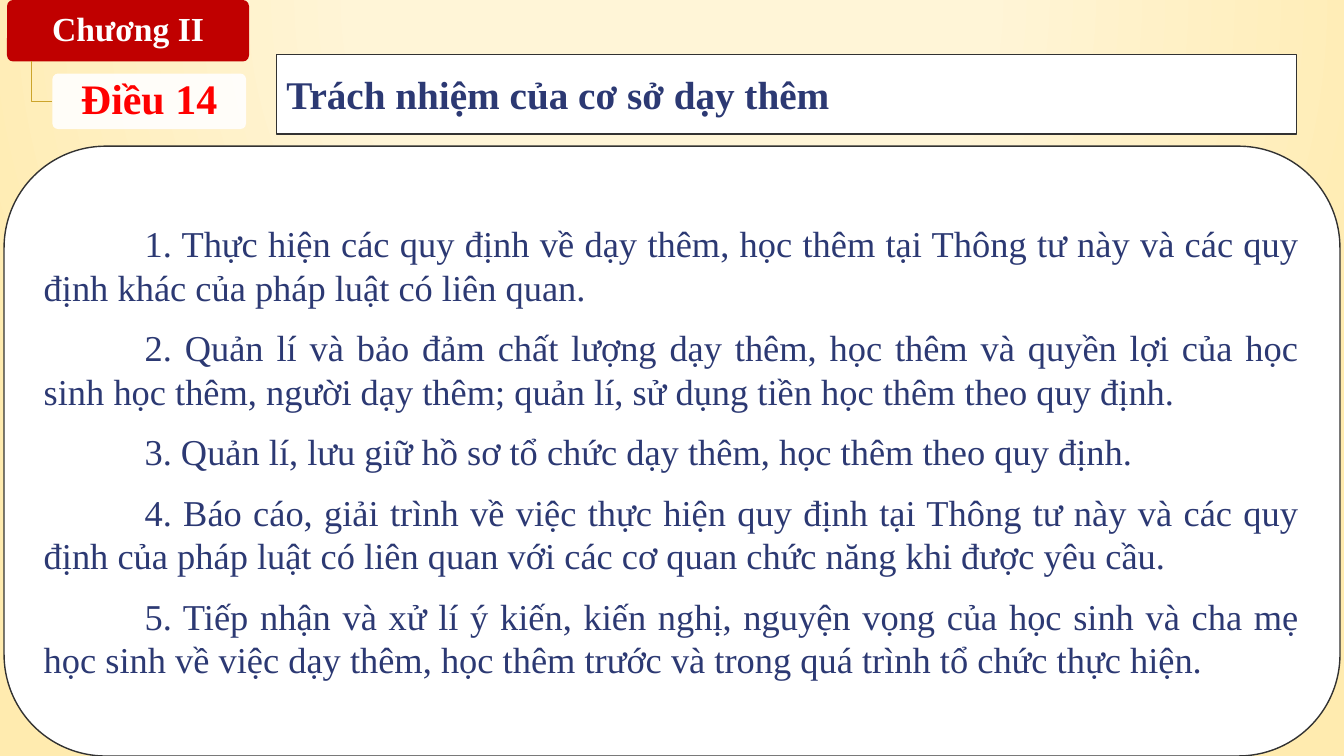
"""Builds the slide on Article 14: duties of tutoring centres."""
from lxml import etree
from pptx import Presentation
from pptx.dml.color import RGBColor
from pptx.enum.shapes import MSO_SHAPE as SHAPE
from pptx.enum.text import MSO_ANCHOR as ANCHOR, PP_ALIGN as ALIGN
from pptx.oxml import parse_xml
from pptx.oxml.ns import nsdecls, qn
from pptx.util import Inches, Pt

RED = RGBColor(0xC0, 0x00, 0x00)
BRIGHT_RED = RGBColor(0xFF, 0x00, 0x00)
WHITE = RGBColor(0xFF, 0xFF, 0xFF)
GOLD = RGBColor(0xCC, 0xA4, 0x2B)
DARK = RGBColor(0x32, 0x32, 0x32)
NAVY = RGBColor(0x2C, 0x39, 0x73)

DUTIES = [
    "1. Thực hiện các quy định về dạy thêm, học thêm tại Thông tư này và các quy định khác "
    "của pháp luật có liên quan.",
    "2. Quản lí và bảo đảm chất lượng dạy thêm, học thêm và quyền lợi của học sinh học thêm, "
    "người dạy thêm; quản lí, sử dụng tiền học thêm theo quy định.",
    "3. Quản lí, lưu giữ hồ sơ tổ chức dạy thêm, học thêm theo quy định.",
    "4. Báo cáo, giải trình về việc thực hiện quy định tại Thông tư này và các quy định của "
    "pháp luật có liên quan với các cơ quan chức năng khi được yêu cầu.",
    "5. Tiếp nhận và xử lí ý kiến, kiến nghị, nguyện vọng của học sinh và cha mẹ học sinh về "
    "việc dạy thêm, học thêm trước và trong quá trình tổ chức thực hiện.",
]


def add_rounded(left, top, width, height, fill):
    box = page.shapes.add_shape(
        SHAPE.ROUNDED_RECTANGLE, Inches(left), Inches(top), Inches(width), Inches(height))
    box.shadow.inherit = False
    box.fill.solid()
    box.fill.fore_color.rgb = fill
    box.line.fill.background()
    return box


def write(box, lines, size, color, bold, align):
    frame = box.text_frame
    frame.text = "\n".join(lines)
    frame.word_wrap = True
    frame.vertical_anchor = ANCHOR.MIDDLE
    for para in frame.paragraphs:
        para.alignment = align
        for span in para.runs:
            span.font.name = "Times New Roman"
            span.font.size = Pt(size)
            span.font.bold = bold
            span.font.color.rgb = color


deck = Presentation()
deck.slide_width = Inches(13.33)
deck.slide_height = Inches(7.5)
page = deck.slides.add_slide(deck.slide_layouts[5])

page.background.fill.gradient()
old_gradient = page.element.find(".//" + qn("a:gradFill"))
gradient = parse_xml(
    f'<a:gradFill {nsdecls("a")} rotWithShape="1"><a:gsLst>'
    '<a:gs pos="0"><a:srgbClr val="FFF5D7"><a:alpha val="59000"/></a:srgbClr></a:gs>'
    '<a:gs pos="40000"><a:srgbClr val="FFF5D7"><a:alpha val="66000"/></a:srgbClr></a:gs>'
    '<a:gs pos="100000"><a:srgbClr val="FFEBAF"/></a:gs></a:gsLst>'
    '<a:path path="circle"><a:fillToRect l="50000" t="-80000" r="50000" b="180000"/></a:path>'
    '</a:gradFill>')
old_gradient.getparent().replace(old_gradient, gradient)

chapter = add_rounded(0.07, 0, 2.4, 0.61, RED)
write(chapter, ["Chương II"], 24, WHITE, True, ALIGN.CENTER)

builder = page.shapes.build_freeform(Inches(0.31), Inches(0.61))
builder.add_line_segments(
    [(Inches(0.31), Inches(1.01)), (Inches(0.52), Inches(1.01))], close=False)
branch = builder.convert_to_shape()
branch.shadow.inherit = False
branch.fill.background()
branch.line.color.rgb = GOLD
branch.line.width = Pt(1)

article = add_rounded(0.52, 0.73, 1.92, 0.55, WHITE)
article_color = article.element.spPr.find(qn("a:solidFill")).find(qn("a:srgbClr"))
etree.SubElement(article_color, qn("a:alpha")).set("val", "90000")
write(article, ["Điều 14"], 30, BRIGHT_RED, True, ALIGN.CENTER)

for label in (chapter, article):
    frame = label.text_frame
    frame.margin_left = frame.margin_right = Inches(0.06)
    frame.margin_top = frame.margin_bottom = Inches(0.04)
    label.adjustments[0] = 0.1
    frame.paragraphs[0].line_spacing = 0.9

body = add_rounded(0.04, 1.45, 13.25, 6.05, WHITE)
write(body, DUTIES, 26, NAVY, False, ALIGN.JUSTIFY)
for para in body.text_frame.paragraphs:
    para.space_before = para.space_after = Pt(6)
    properties = para.runs[0].font and para._p.get_or_add_pPr()
    properties.set("marL", "0")
    properties.set("indent", str(Inches(1)))

title = page.shapes.title
title.left, title.top = Inches(2.74), Inches(0.54)
title.width, title.height = Inches(10.12), Inches(0.79)
title.element.spPr.append(
    parse_xml(f'<a:prstGeom {nsdecls("a")} prst="roundRect"><a:avLst/></a:prstGeom>'))
title.fill.solid()
title.fill.fore_color.rgb = WHITE
write(title, ["Trách nhiệm của cơ sở dạy thêm"], 28, NAVY, True, ALIGN.LEFT)

for panel in (body, title):
    panel.line.color.rgb = DARK
    panel.line.width = Pt(1)

deck.save("out.pptx")
